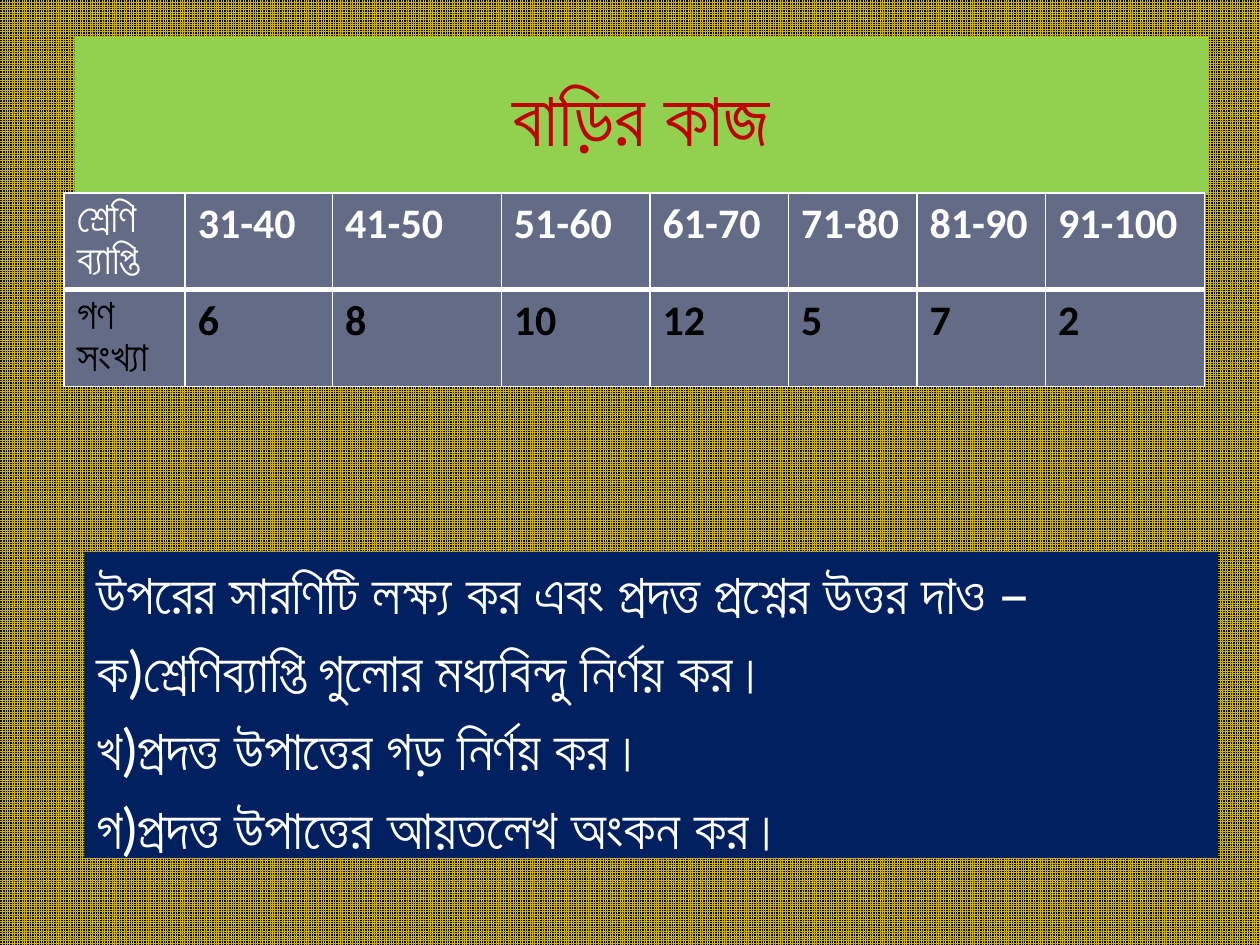
"""Build a homework slide with a frequency table and its questions."""
from dataclasses import dataclass

from lxml.etree import SubElement
from pptx import Presentation
from pptx.dml.color import RGBColor
from pptx.enum.dml import MSO_PATTERN
from pptx.enum.text import MSO_ANCHOR, MSO_AUTO_SIZE, PP_ALIGN
from pptx.oxml.ns import qn
from pptx.util import Inches, Pt


@dataclass
class Style:
    font: str
    size: int
    color: str
    bold: bool = False


@dataclass
class Row:
    label: str
    values: list[str]
    color: str
    bottom: int


TITLE = Style("Lato", 44, "C00000")
BODY = Style("Lato", 32, "FFFFFF")
COLS = [0.96, 1.17, 1.34, 1.18, 1.1, 1.02, 1.02, 1.26]
ROW_H = 0.77
ROWS = [
    Row("শ্রেণি ব্যাপ্তি",
        ["31-40", "41-50", "51-60", "61-70", "71-80", "81-90", "91-100"],
        "FFFFFF", 3),
    Row("গণ সংখ্যা", ["6", "8", "10", "12", "5", "7", "2"], "000000", 1),
]
QUESTIONS = [
    "উপরের সারণিটি লক্ষ্য কর এবং প্রদত্ত প্রশ্নের উত্তর দাও –",
    "ক)শ্রেণিব্যাপ্তি গুলোর মধ্যবিন্দু নির্ণয় কর।",
    "খ)প্রদত্ত উপাত্তের গড় নির্ণয় কর।",
    "গ)প্রদত্ত উপাত্তের আয়তলেখ অংকন কর।",
]


def rgb(color: str) -> RGBColor:
    return RGBColor.from_string(color)


def paint(fill, color: str) -> None:
    fill.solid()
    fill.fore_color.rgb = rgb(color)


def add_text(p, text: str, style: Style) -> None:
    r = p.add_run()
    r.text = text
    r.font.name = style.font
    r.font.size = Pt(style.size)
    r.font.bold = style.bold
    r.font.color.rgb = rgb(style.color)


def set_borders(cell, color: str, widths: dict[str, int]) -> None:
    tc_pr = cell._tc.get_or_add_tcPr()
    for i, (side, width) in enumerate(widths.items()):
        ln = SubElement(tc_pr, qn(f"a:ln{side}"), w=str(Pt(width)))
        SubElement(SubElement(ln, qn("a:solidFill")), qn("a:srgbClr"), val=color)
        tc_pr.insert(i, ln)


def add_title(s, text: str) -> None:
    sp = s.shapes.title
    sp.left, sp.top, sp.width, sp.height = map(Inches, (0.59, 0.29, 9, 1.25))
    paint(sp.fill, "92D050")
    tf = sp.text_frame
    tf.auto_size = MSO_AUTO_SIZE.NONE
    tf.vertical_anchor = MSO_ANCHOR.MIDDLE
    p = tf.paragraphs[0]
    p.alignment = PP_ALIGN.CENTER
    add_text(p, text, TITLE)


def add_frequency_table(s, rows: list[Row]) -> None:
    table = s.shapes.add_table(
        len(rows), len(COLS), Inches(0.51), Inches(1.53),
        Inches(sum(COLS)), Inches(ROW_H * len(rows))).table
    for col, width in zip(table.columns, COLS):
        col.width = Inches(width)
    for i, row in enumerate(rows):
        top = rows[i - 1].bottom if i else 1
        style = Style("Calibri", 24, row.color, True)
        for j, text in enumerate([row.label, *row.values]):
            cell = table.cell(i, j)
            paint(cell.fill, "646B86")
            set_borders(cell, "FFFFFF", {"L": 1, "R": 1, "T": top, "B": row.bottom})
            add_text(cell.text_frame.paragraphs[0], text, style)


def add_questions(s, lines: list[str]) -> None:
    sp = s.shapes.add_textbox(*map(Inches, (0.67, 4.38, 9, 2.43)))
    paint(sp.fill, "002060")
    tf = sp.text_frame
    tf.word_wrap = True
    for i, line in enumerate(lines):
        p = tf.add_paragraph() if i else tf.paragraphs[0]
        p.space_before = Pt(BODY.size * 0.2)
        add_text(p, line, BODY)


def main() -> None:
    prs = Presentation()
    prs.slide_width, prs.slide_height = Inches(10), Inches(7.5)
    s = prs.slides.add_slide(prs.slide_layouts[5])
    fill = s.background.fill
    fill.patterned()
    fill.pattern = MSO_PATTERN.SMALL_GRID
    fill.fore_color.rgb = rgb("CCB400")
    fill.back_color.rgb = rgb("000000")
    add_title(s, "বাড়ির কাজ")
    add_frequency_table(s, ROWS)
    add_questions(s, QUESTIONS)
    prs.save("out.pptx")


if __name__ == "__main__":
    main()
